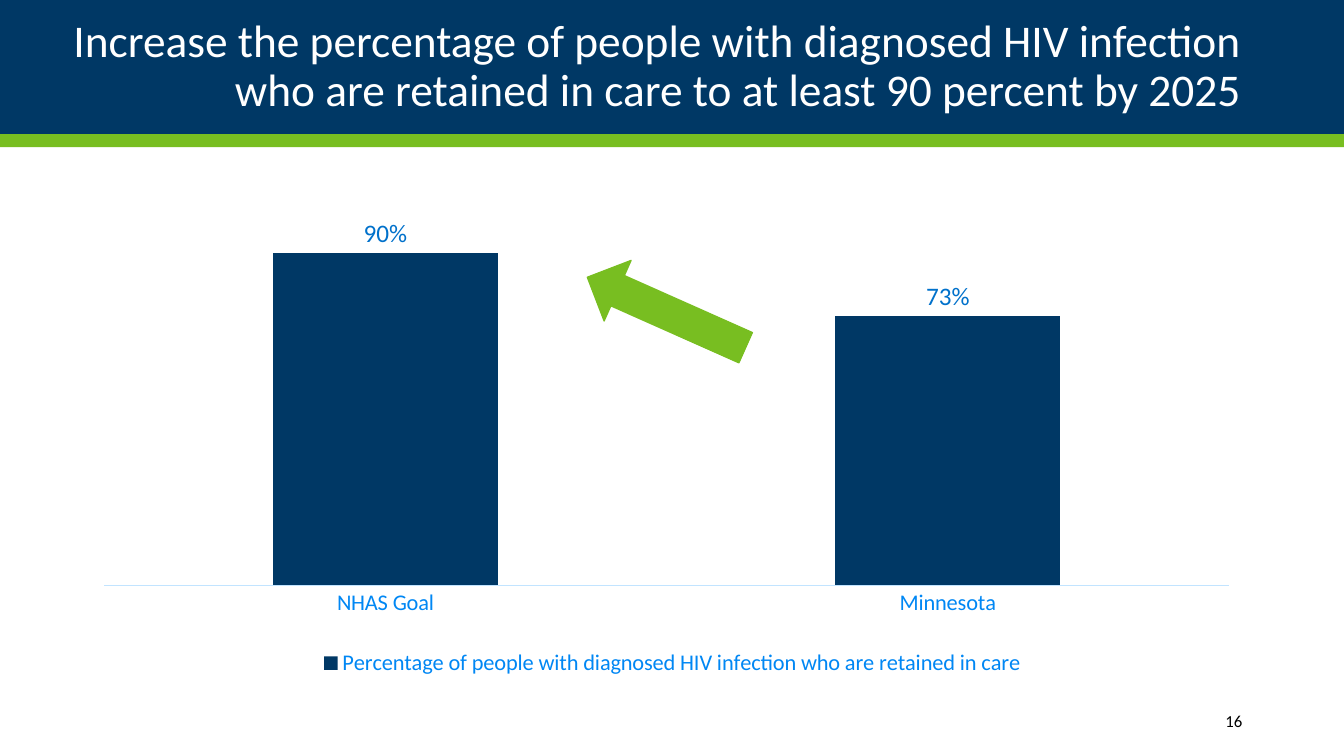
import pptx
import pptx.chart.data
import pptx.dml.color
import pptx.enum.chart
import pptx.enum.shapes
import pptx.enum.text
import pptx.oxml
import pptx.oxml.ns
import pptx.util
from dataclasses import dataclass

Inches = pptx.util.Inches
Color = pptx.dml.color.RGBColor.from_string


@dataclass(frozen=True)
class Theme:
    font: str = "Calibri"
    navy: str = "003865"
    green: str = "78BE21"
    white: str = "FFFFFF"
    black: str = "000000"
    axis_text: str = "0087F4"
    label_text: str = "0071CB"
    axis_line: str = "C2E4FF"
    title_size: float = 32.4
    label_size: float = 18
    axis_size: float = 16
    number_size: float = 12


theme = Theme()


def style_font(font, size, color):
    font.name = theme.font
    font.size = pptx.util.Pt(size)
    font.bold = False
    font.color.rgb = Color(color)


def add_solid(kind, left, top, width, height, color):
    solid = page.shapes.add_shape(
        kind, Inches(left), Inches(top), Inches(width), Inches(height))
    solid.shadow.inherit = False
    solid.fill.solid()
    solid.fill.fore_color.rgb = Color(color)
    solid.line.fill.background()
    return solid


deck = pptx.Presentation()
deck.slide_width = Inches(13.33)
deck.slide_height = Inches(7.5)
page = deck.slides.add_slide(deck.slide_layouts[5])
shape_kinds = pptx.enum.shapes.MSO_SHAPE

title = page.shapes.title
for top, height, color in [(0, 1.33, theme.navy), (1.33, 0.13, theme.green)]:
    band = add_solid(shape_kinds.RECTANGLE, 0, top, 13.33, height, color)
    title.element.addprevious(band.element)

title.left, title.top = Inches(0.35), Inches(0.17)
title.width, title.height = Inches(12.06), Inches(1)
title.text_frame.text = (
    "Increase the percentage of people with diagnosed HIV infection "
    "who are retained in care to at least 90 percent by 2025")

chart_data = pptx.chart.data.CategoryChartData(number_format="0%")
chart_data.categories = ["NHAS Goal", "Minnesota"]
chart_data.add_series(
    "Percentage of people with diagnosed HIV infection who are retained in care",
    [0.9, 0.73])
chart = page.shapes.add_chart(
    pptx.enum.chart.XL_CHART_TYPE.COLUMN_CLUSTERED,
    Inches(0.92), Inches(2), Inches(11.5), Inches(4.76), chart_data).chart
style_font(chart.font, theme.axis_size, theme.axis_text)
chart.has_title = False
chart.has_legend = True
chart.legend.position = pptx.enum.chart.XL_LEGEND_POSITION.BOTTOM
chart.legend.include_in_layout = False
style_font(chart.legend.font, theme.axis_size, theme.axis_text)

category_axis = chart.category_axis
category_axis.major_tick_mark = pptx.enum.chart.XL_TICK_MARK.NONE
category_axis.format.line.color.rgb = Color(theme.axis_line)
category_axis.format.line.width = pptx.util.Pt(0.75)
style_font(category_axis.tick_labels.font, theme.axis_size, theme.axis_text)

value_axis = chart.value_axis
value_axis.minimum_scale = 0
value_axis.maximum_scale = 1
value_axis.has_major_gridlines = False
value_axis.visible = False

plot = chart.plots[0]
plot.gap_width = 150
plot.vary_by_categories = False
plot.has_data_labels = True
labels = plot.data_labels
labels.show_value = True
labels.number_format = "0%"
labels.number_format_is_linked = False
labels.position = pptx.enum.chart.XL_LABEL_POSITION.OUTSIDE_END
style_font(labels.font, theme.label_size, theme.label_text)
series = plot.series[0]
series.format.fill.solid()
series.format.fill.fore_color.rgb = Color(theme.navy)

plot_area = chart.element.find(".//" + pptx.oxml.ns.qn("c:plotArea"))
for old_layout in plot_area.findall(pptx.oxml.ns.qn("c:layout")):
    plot_area.remove(old_layout)
plot_area.insert(0, pptx.oxml.parse_xml(
    f'<c:layout {pptx.oxml.ns.nsdecls("c")}><c:manualLayout>'
    '<c:layoutTarget val="inner"/><c:xMode val="edge"/><c:yMode val="edge"/>'
    '<c:x val="0.01"/><c:y val="0.03"/><c:w val="0.97"/><c:h val="0.77"/>'
    '</c:manualLayout></c:layout>'))

number_box = page.shapes.add_textbox(
    Inches(10.82), Inches(6.95), Inches(1.6), Inches(0.4))
number_box.text_frame.text = "16"

for box, size, color, spacing in [
        (title, theme.title_size, theme.white, 0.9),
        (number_box, theme.number_size, theme.black, 1)]:
    frame = box.text_frame
    frame.word_wrap = True
    frame.auto_size = pptx.enum.text.MSO_AUTO_SIZE.NONE
    frame.vertical_anchor = pptx.enum.text.MSO_ANCHOR.MIDDLE
    para = frame.paragraphs[0]
    para.alignment = pptx.enum.text.PP_ALIGN.RIGHT
    para.line_spacing = spacing
    style_font(para.runs[0].font, size, color)

arrow = add_solid(shape_kinds.LEFT_ARROW, 5.75, 2.77, 1.72, 0.66, theme.green)
arrow.rotation = 24
arrow.line.color.rgb = Color(theme.green)
arrow.line.width = pptx.util.Pt(0.85)

deck.save("out.pptx")
